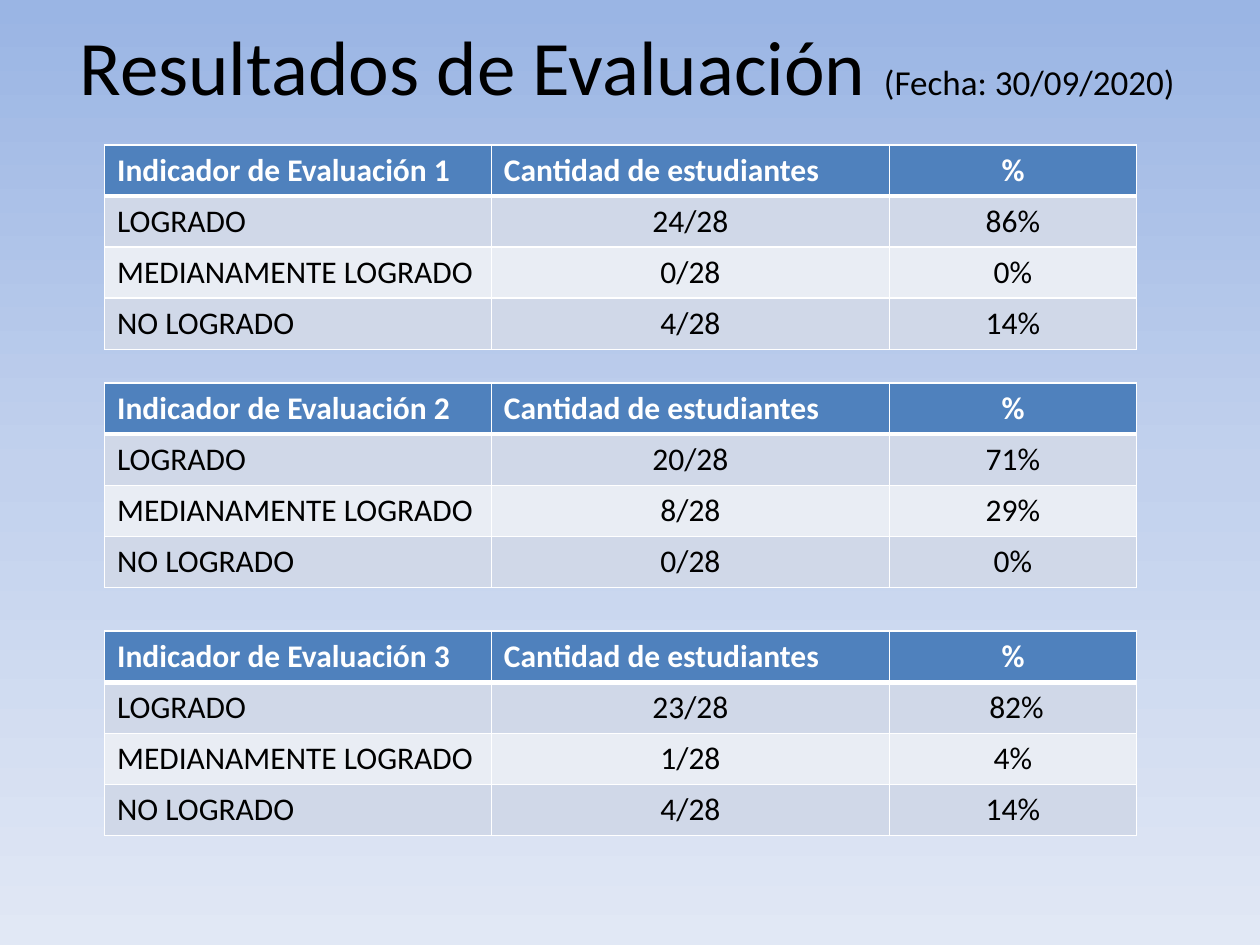
from copy import deepcopy

from lxml.etree import SubElement
from pptx import Presentation
from pptx.dml.color import RGBColor
from pptx.enum.text import MSO_ANCHOR, PP_ALIGN
from pptx.oxml.ns import qn
from pptx.util import Inches, Pt

BACKGROUND_STOPS = [(0, "9AB5E4"), (0.5, "C2D1ED"), (1, "E1E8F5")]
COLUMN_WIDTHS = [3.07, 3.16, 1.96]
ROW_HEIGHT = 0.405
LEVELS = ["LOGRADO", "MEDIANAMENTE LOGRADO", "NO LOGRADO"]
# Top of the table, then student count and percentage for each level
INDICATORS = [
    (1.15, [("24/28", "86%"), ("0/28", "0%"), ("4/28", "14%")]),
    (3.04, [("20/28", "71%"), ("8/28", "29%"), ("0/28", "0%")]),
    (5.01, [("23/28", " 82%"), ("1/28", "4%"), ("4/28", "14%")]),
]


def rgb(value):
    return RGBColor.from_string(value)


class ResultsSlide:
    font = "Calibri"
    text = "000000"
    header_text = border = "FFFFFF"
    header_fill = "4F81BD"
    bands = ["D0D8E8", "E9EDF4"]

    def __init__(self, presentation):
        self.slide = presentation.slides.add_slide(presentation.slide_layouts[5])

    def background(self, stops):
        fill = self.slide.background.fill
        fill.gradient()
        fill.gradient_angle = 270
        stop_list = self.slide.element.find(".//" + qn("a:gsLst"))
        while len(stop_list) < len(stops):
            stop_list.append(deepcopy(stop_list[0]))
        for stop, (position, color) in zip(fill.gradient_stops, stops):
            stop.position = position
            stop.color.rgb = rgb(color)

    def format_run(self, run, size, color, bold=False):
        run.font.name = self.font
        run.font.size = Pt(size)
        run.font.bold = bold
        run.font.color.rgb = rgb(color)

    def title(self, heading, date):
        title = self.slide.shapes.title
        title.left, title.top = Inches(0.51), Inches(0)
        title.width, title.height = Inches(9), Inches(1.02)
        title.text_frame.vertical_anchor = MSO_ANCHOR.MIDDLE
        paragraph = title.text_frame.paragraphs[0]
        paragraph.alignment = PP_ALIGN.CENTER
        for wording, size in [(heading, 44), (date, 20)]:
            run = paragraph.add_run()
            run.text = wording
            self.format_run(run, size, self.text)

    def cell_borders(self, cell, top, bottom):
        properties = cell._tc.get_or_add_tcPr()
        for side, width in [("L", 1), ("R", 1), ("T", top), ("B", bottom)]:
            line = SubElement(properties, qn(f"a:ln{side}"), w=str(Pt(width)))
            fill = SubElement(line, qn("a:solidFill"))
            SubElement(fill, qn("a:srgbClr"), val=self.border)

    def cell(self, cell, wording, row, centred):
        is_header = row == 0
        self.cell_borders(cell, 3 if row == 1 else 1, 3 if is_header else 1)
        cell.fill.solid()
        cell.fill.fore_color.rgb = rgb(
            self.header_fill if is_header else self.bands[(row - 1) % 2])
        cell.text_frame.text = wording
        paragraph = cell.text_frame.paragraphs[0]
        paragraph.alignment = PP_ALIGN.CENTER if centred else PP_ALIGN.LEFT
        self.format_run(paragraph.runs[0], 18,
                        self.header_text if is_header else self.text, is_header)

    def table(self, top, rows):
        table = self.slide.shapes.add_table(
            len(rows), len(COLUMN_WIDTHS), Inches(0.83), Inches(top),
            Inches(sum(COLUMN_WIDTHS)), Inches(ROW_HEIGHT * len(rows))).table
        for column, width in zip(table.columns, COLUMN_WIDTHS):
            column.width = Inches(width)
        for r, row in enumerate(rows):
            table.rows[r].height = Inches(ROW_HEIGHT)
            for c, wording in enumerate(row):
                centred = c == 2 or (c == 1 and r > 0)
                self.cell(table.cell(r, c), wording, r, centred)


def main():
    presentation = Presentation()
    presentation.slide_width, presentation.slide_height = Inches(10), Inches(7.5)
    results = ResultsSlide(presentation)
    results.background(BACKGROUND_STOPS)
    results.title("Resultados de Evaluación ", "(Fecha: 30/09/2020) ")
    for number, (top, scores) in enumerate(INDICATORS, 1):
        header = (f"Indicador de Evaluación {number}", "Cantidad de estudiantes", "%")
        body = [(level, *score) for level, score in zip(LEVELS, scores)]
        results.table(top, [header, *body])
    presentation.save("out.pptx")


if __name__ == "__main__":
    main()
